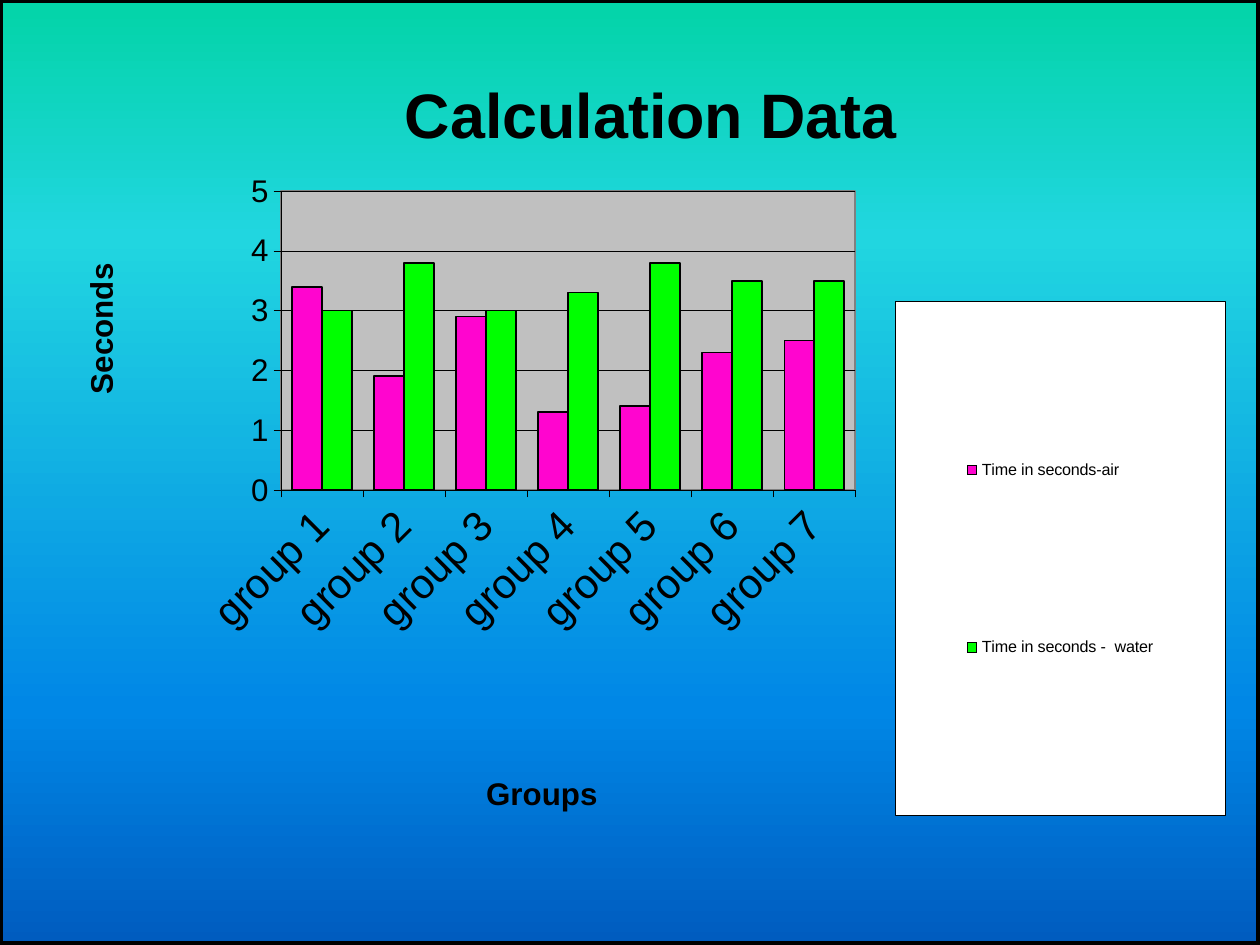
from pptx import Presentation
from pptx.chart.data import CategoryChartData
from pptx.dml.color import RGBColor
from pptx.enum.chart import XL_CHART_TYPE, XL_LEGEND_POSITION, XL_TICK_MARK
from pptx.oxml import parse_xml
from pptx.oxml.ns import nsdecls, qn
from pptx.util import Emu, Pt

WIDTH, HEIGHT = 1260, 945
PX = 914400 // 126
FONT = "Arial"

BLACK = RGBColor(0x00, 0x00, 0x00)
WHITE = RGBColor(0xFF, 0xFF, 0xFF)
SILVER = RGBColor(0xC0, 0xC0, 0xC0)
GRAY = RGBColor(0x80, 0x80, 0x80)
MAGENTA = RGBColor(0xFF, 0x05, 0xCF)
GREEN = RGBColor(0x00, 0xFF, 0x00)
GRADIENT = [
    (0, RGBColor(0x03, 0xD4, 0xA8)),
    (25, RGBColor(0x21, 0xD6, 0xE0)),
    (75, RGBColor(0x00, 0x87, 0xE6)),
    (100, RGBColor(0x00, 0x5C, 0xBF)),
]

GROUPS = [f"group {n}" for n in range(1, 8)]
SERIES = [
    ("Time in seconds-air", [3.4, 1.9, 2.9, 1.3, 1.4, 2.3, 2.5], MAGENTA),
    ("Time in seconds -  water", [3, 3.8, 3, 3.3, 3.8, 3.5, 3.5], GREEN),
]


def px(n):
    return Emu(n * PX)


def style_font(font, size, bold=False):
    font.name = FONT
    font.size = Pt(size)
    font.bold = bold
    font.color.rgb = BLACK


def style_line(line, width, color=BLACK):
    line.color.rgb = color
    line.width = Pt(width)


def place(element, index, x, y, w=None, h=None, inner=False):
    """Give a chart part a manual layout, in px of the chart."""
    for old in element.findall(qn("c:layout")):
        element.remove(old)
    parts = '<c:layoutTarget val="inner"/>' if inner else ""
    parts += '<c:xMode val="edge"/><c:yMode val="edge"/>'
    for tag, length, full in (("x", x, WIDTH), ("y", y, HEIGHT),
                              ("w", w, WIDTH), ("h", h, HEIGHT)):
        if length is not None:
            parts += f'<c:{tag} val="{length / full:.4f}"/>'
    element.insert(index, parse_xml(
        f'<c:layout {nsdecls("c")}><c:manualLayout>{parts}'
        '</c:manualLayout></c:layout>'))


def add_title(title, text, size, x, y, rotation=0):
    tf = title.text_frame
    r = tf.paragraphs[0].add_run()
    r.text = text
    style_font(r.font, size, bold=True)
    body = tf._txBody.find(qn("a:bodyPr"))
    body.set("rot", str(rotation * 60000))
    body.set("vert", "horz")
    place(title._element, 1, x, y)


def style_axis(axis, size, rotation=0):
    axis.major_tick_mark = XL_TICK_MARK.OUTSIDE
    axis.minor_tick_mark = XL_TICK_MARK.NONE
    style_font(axis.tick_labels.font, size)
    style_line(axis.format.line, 0.25)
    body = axis._element.find(qn("c:txPr")).find(qn("a:bodyPr"))
    body.set("rot", str(rotation * 60000))
    body.set("vert", "horz")


def fill_chart_area(chart):
    stops = "".join(
        f'<a:gs pos="{pos * 1000}"><a:srgbClr val="{color}"/></a:gs>'
        for pos, color in GRADIENT)
    area = parse_xml(
        f'<c:spPr {nsdecls("c", "a")}>'
        f'<a:gradFill><a:gsLst>{stops}</a:gsLst>'
        '<a:lin ang="5400000" scaled="1"/></a:gradFill>'
        f'<a:ln w="{Pt(2)}"><a:solidFill><a:srgbClr val="{BLACK}"/>'
        '</a:solidFill></a:ln></c:spPr>')
    chart._chartSpace.find(qn("c:chart")).addnext(area)


def box_format(fill, line, width):
    return parse_xml(
        f'<c:spPr {nsdecls("c", "a")}>'
        f'<a:solidFill><a:srgbClr val="{fill}"/></a:solidFill>'
        f'<a:ln w="{Pt(width)}"><a:solidFill><a:srgbClr val="{line}"/>'
        '</a:solidFill></a:ln></c:spPr>')


def add_column_chart(s):
    data = CategoryChartData()
    data.categories = GROUPS
    for name, values, _ in SERIES:
        data.add_series(name, values)
    chart = s.shapes.add_chart(XL_CHART_TYPE.COLUMN_CLUSTERED, 0, 0,
                               px(WIDTH), px(HEIGHT), data).chart
    style_font(chart.font, 10)
    plot = chart.plots[0]
    plot.vary_by_categories = False
    plot.gap_width = 75
    plot.overlap = 0
    for series, (_, _, color) in zip(plot.series, SERIES):
        series.format.fill.solid()
        series.format.fill.fore_color.rgb = color
        style_line(series.format.line, 1)
    return chart


def add_legend(chart):
    chart.has_legend = True
    legend = chart.legend
    legend.position = XL_LEGEND_POSITION.RIGHT
    legend.include_in_layout = False
    style_font(legend.font, 9.2)
    place(legend._element, 1, 896, 301, 331, 516)
    legend._element.find(qn("c:txPr")).addprevious(
        box_format(WHITE, BLACK, 0.25))


def main():
    prs = Presentation()
    prs.slide_width, prs.slide_height = px(WIDTH), px(HEIGHT)
    s = prs.slides.add_slide(prs.slide_layouts[6])
    s.background.fill.solid()
    s.background.fill.fore_color.rgb = BLACK

    # Chart and its areas
    chart = add_column_chart(s)
    plot_area = chart._chartSpace.find(qn("c:chart")).find(qn("c:plotArea"))
    place(plot_area, 0, 280, 190, 576, 300, inner=True)
    plot_area.append(box_format(SILVER, GRAY, 1))
    fill_chart_area(chart)

    # Axes
    groups, seconds = chart.category_axis, chart.value_axis
    style_axis(groups, 24, rotation=-45)
    style_axis(seconds, 18)
    seconds.minimum_scale, seconds.maximum_scale = 0, 5
    seconds.major_unit = 1
    seconds.tick_labels.number_format = "General"
    seconds.tick_labels.number_format_is_linked = False
    style_line(seconds.major_gridlines.format.line, 0.25)

    # Titles and legend
    chart.has_title = True
    add_title(chart.chart_title, "Calculation Data", 36, 393, 62)
    add_title(groups.axis_title, "Groups", 18, 480, 768)
    add_title(seconds.axis_title, "Seconds", 18, 73, 257, rotation=-90)
    add_legend(chart)

    prs.save("out.pptx")


if __name__ == "__main__":
    main()
